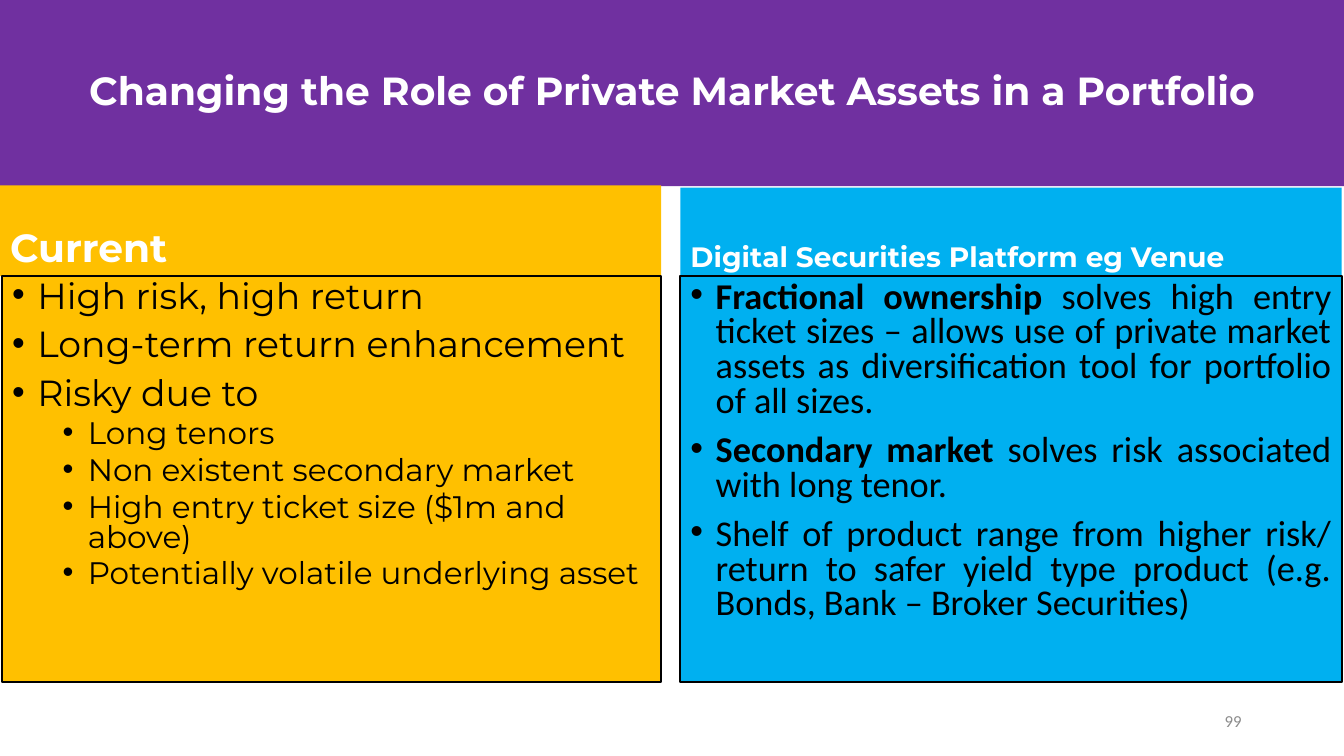
"""Build the slide on the role of private market assets in a portfolio."""
from dataclasses import dataclass

from lxml import etree
from pptx import Presentation
from pptx.dml.color import RGBColor
from pptx.enum.text import MSO_ANCHOR, MSO_AUTO_SIZE, PP_ALIGN
from pptx.oxml.ns import qn
from pptx.util import Pt

TOP, MIDDLE, BOTTOM = MSO_ANCHOR.TOP, MSO_ANCHOR.MIDDLE, MSO_ANCHOR.BOTTOM
LEFT, CENTER, RIGHT, JUSTIFY = (PP_ALIGN.LEFT, PP_ALIGN.CENTER,
                                PP_ALIGN.RIGHT, PP_ALIGN.JUSTIFY)
NO_FIT = MSO_AUTO_SIZE.NONE
COMPARISON = 4


@dataclass(frozen=True)
class Theme:
    purple: str = "7030A0"
    amber: str = "FFC000"
    blue: str = "00B0F0"
    white: str = "FFFFFF"
    black: str = "000000"
    grey: str = "8C8C8C"
    display: str = "Montserrat"
    text: str = "Calibri"
    heading: float = 28
    subheading: float = 20
    item: float = 25.9
    subitem: float = 22.2
    small: float = 12


def add_paragraph(tf, text, *, font, size, color, bold=False, lead="",
                  align=LEFT, spacing=0.9, before=0, bullet_at=None, level=0):
    first = not tf.text
    p = tf.paragraphs[0] if first else tf.add_paragraph()
    p.alignment, p.level, p.line_spacing = align, level, spacing
    p.space_before = Pt(0 if first else before)
    if bullet_at is not None:
        pPr = p._p.get_or_add_pPr()
        pPr.set("marL", str(Pt(bullet_at + 18)))
        pPr.set("indent", str(Pt(-18)))
        etree.SubElement(pPr, qn("a:buFont"), typeface="Arial")
        etree.SubElement(pPr, qn("a:buChar"), char="•")
    for part, strong in ((lead, True), (text, bold)):
        if part:
            r = p.add_run()
            r.text = part
            r.font.name, r.font.size, r.font.bold = font, Pt(size), strong
            r.font.color.rgb = RGBColor.from_string(color)


class Deck:
    def __init__(self, theme):
        self.theme = theme
        self.prs = Presentation()
        self.prs.slide_width, self.prs.slide_height = Pt(960), Pt(540)
        self.s = self.prs.slides.add_slide(self.prs.slide_layouts[COMPARISON])

    def place(self, sp, box, anchor):
        sp.left, sp.top, sp.width, sp.height = map(Pt, box)
        tf = sp.text_frame
        tf.word_wrap, tf.auto_size, tf.vertical_anchor = True, NO_FIT, anchor
        return tf

    def heading(self, idx, box, text, fill, size, anchor=BOTTOM, align=LEFT):
        sp = self.s.placeholders[idx]
        tf = self.place(sp, box, anchor)
        sp.fill.solid()
        sp.fill.fore_color.rgb = RGBColor.from_string(fill)
        add_paragraph(tf, text, font=self.theme.display, size=size,
                      color=self.theme.white, bold=True, align=align)

    def bullets(self, idx, box, items, fill, font, align=LEFT):
        t = self.theme
        sp = self.s.placeholders[idx]
        tf = self.place(sp, box, TOP)
        sp.fill.solid()
        sp.fill.fore_color.rgb = RGBColor.from_string(fill)
        sp.line.color.rgb = RGBColor.from_string(t.black)
        sp.line.width = Pt(1.5)
        for level, lead, text in items:
            add_paragraph(tf, text, lead=lead, font=font, color=t.black,
                          size=t.subitem if level else t.item, align=align,
                          spacing=0.8, before=5 if level else 10,
                          bullet_at=36 * level, level=level)

    def page_number(self, box, text):
        t = self.theme
        tf = self.place(self.s.shapes.add_textbox(0, 0, 0, 0), box, MIDDLE)
        add_paragraph(tf, text, font=t.text, size=t.small, color=t.grey,
                      align=RIGHT, spacing=1.0)

    def save(self):
        self.prs.save("out.pptx")


CURRENT = [
    (0, "", "High risk, high return"),
    (0, "", "Long-term return enhancement"),
    (0, "", "Risky due to"),
    (1, "", "Long tenors"),
    (1, "", "Non existent secondary market"),
    (1, "", "High entry ticket size ($1m and above)"),
    (1, "", "Potentially volatile underlying asset"),
]
PLATFORM = [
    (0, "Fractional ownership",
     " solves high entry ticket sizes – allows use of private market assets "
     "as diversification tool for portfolio of all sizes."),
    (0, "Secondary market", " solves risk associated with long tenor."),
    (0, "", "Shelf of product range from higher risk/ return to safer yield "
            "type product (e.g. Bonds, Bank – Broker Securities)"),
]


def main():
    t = Theme()
    deck = Deck(t)
    deck.heading(0, (0, 0, 960, 133),
                 "Changing the Role of Private Market Assets in a Portfolio",
                 t.purple, t.heading, MIDDLE, CENTER)
    deck.heading(1, (0, 132.5, 472.3, 64.8), "Current", t.amber, t.heading)
    deck.bullets(2, (1.5, 197.3, 470.5, 290), CURRENT, t.amber, t.display)
    deck.heading(3, (486, 134, 472.3, 64.8),
                 "Digital Securities Platform eg Venue", t.blue, t.subheading)
    deck.bullets(4, (486, 197.3, 472.3, 290), PLATFORM, t.blue, t.text, JUSTIFY)
    deck.page_number((678, 500.5, 216, 28.8), "99")
    deck.save()


if __name__ == "__main__":
    main()
